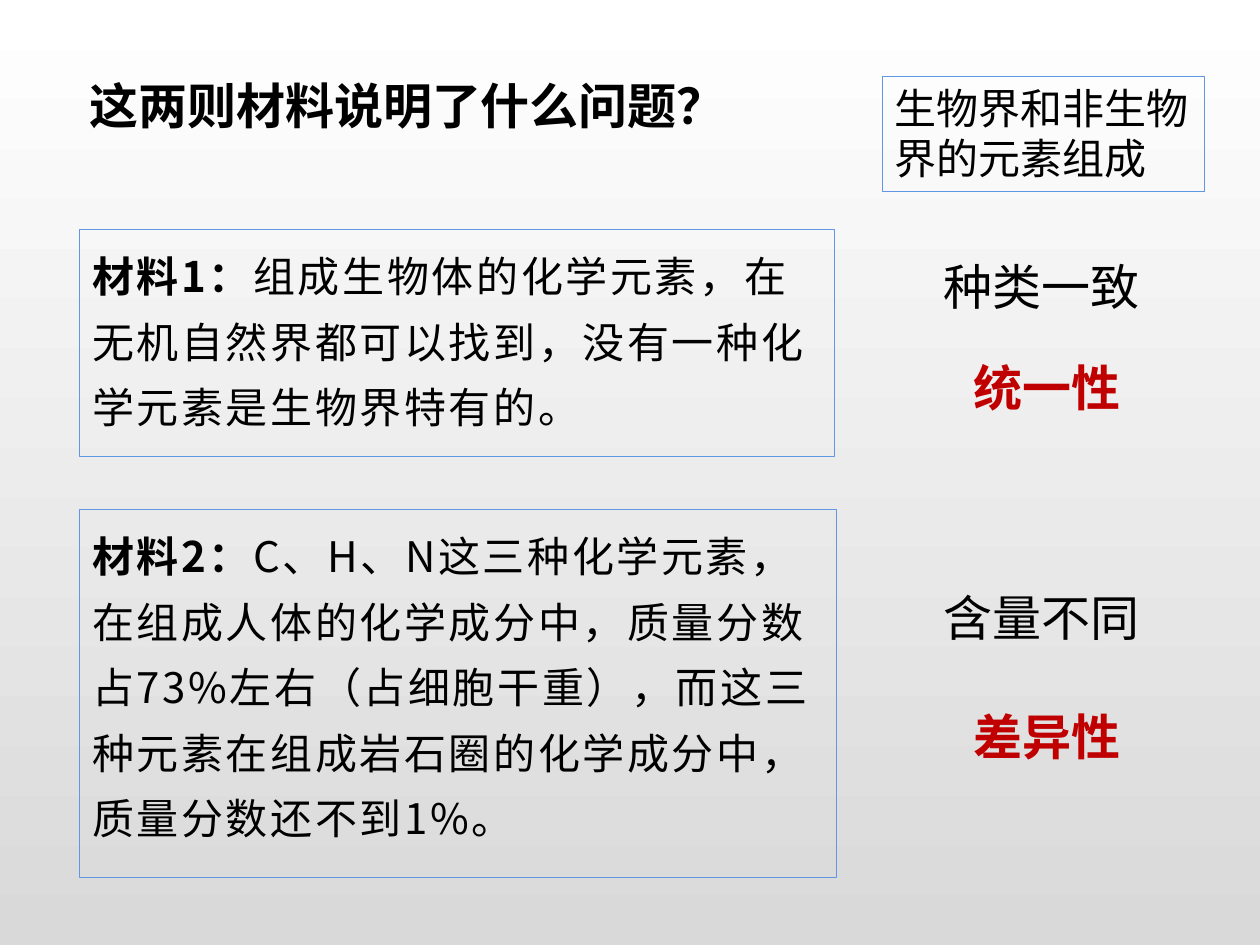
"""Build a slide on what two materials say about elements in living and non-living nature."""
from lxml.etree import SubElement
from pptx import Presentation
from pptx.dml.color import RGBColor
from pptx.enum.text import MSO_ANCHOR, MSO_AUTO_SIZE, PP_ALIGN
from pptx.oxml.ns import qn
from pptx.util import Pt

CJK = "Noto Sans CJK SC"


def color(value):
    return RGBColor.from_string(value)


def write(sp, box, runs, size, name, value="000000", line=False):
    sp.left, sp.top, sp.width, sp.height = [Pt(v) for v in box]
    if line:
        sp.line.color.rgb = color("6096E6")
        sp.line.width = Pt(0.25)
    tf = sp.text_frame
    tf.word_wrap = True
    tf.auto_size = MSO_AUTO_SIZE.NONE
    tf.vertical_anchor = MSO_ANCHOR.TOP
    p = tf.paragraphs[0]
    p.alignment = PP_ALIGN.LEFT
    p.space_before = Pt(0)
    p.font.size = Pt(size)
    p.font.name = name
    p.font.color.rgb = color(value)
    SubElement(p.font._element, qn("a:ea")).set("typeface", CJK)
    for text, bold in runs:
        r = p.add_run()
        r.text = text
        r.font.bold = bold
    return p


prs = Presentation()
prs.slide_width, prs.slide_height = Pt(720), Pt(540)
s = prs.slides.add_slide(prs.slide_layouts[3])

fill = s.background.fill
fill.gradient()
fill.gradient_angle = 270
for stop, position, value in zip(fill.gradient_stops, (0, 1), ("FFFFFF", "D9D9D9")):
    stop.position = position
    stop.color.rgb = color(value)

write(s.shapes.title, (44, 39.6, 381, 41), [("这两则材料说明了什么问题？", True)], 28, CJK)

materials = [
    (1, (45.4, 131, 431.3, 129.6), "材料1：",
     "组成生物体的化学元素，在无机自然界都可以找到，没有一种化学元素是生物界特有的。"),
    (2, (45.4, 291, 432.3, 210.3), "材料2：",
     "C、H、N这三种化学元素，在组成人体的化学成分中，质量分数占73%左右（占细胞干重），"
     "而这三种元素在组成岩石圈的化学成分中，质量分数还不到1%。"),
]
for idx, box, label, text in materials:
    p = write(s.placeholders[idx], box, [(label, True), (text, False)], 24, CJK, line=True)
    p.line_spacing = 1.3
    p.space_after = Pt(6)
    p.font._element.set("spc", "150")
    pPr = p._p.get_or_add_pPr()
    pPr.set("marL", "0")
    pPr.set("indent", "0")
    pPr.insert_element_before(pPr.makeelement(qn("a:buNone")), "a:tabLst", "a:defRPr")

labels = [
    ("生物界和非生物界的元素组成", (504, 43.6, 184, 65.6), 24, "000000", False, True),
    ("种类一致", (532, 143.3, 137.5, 41), 28, "000000", False, False),
    ("统一性", (549.4, 200.9, 102.3, 41), 28, "C00000", True, False),
    ("含量不同", (532, 332, 137.5, 41), 28, "000000", False, False),
    ("差异性", (549.4, 400.3, 102.3, 41), 28, "C00000", True, False),
]
for text, box, size, value, bold, line in labels:
    sp = s.shapes.add_textbox(0, 0, 0, 0)
    write(sp, box, [(text, bold)], size, "Arial", value, line)

prs.save("out.pptx")
